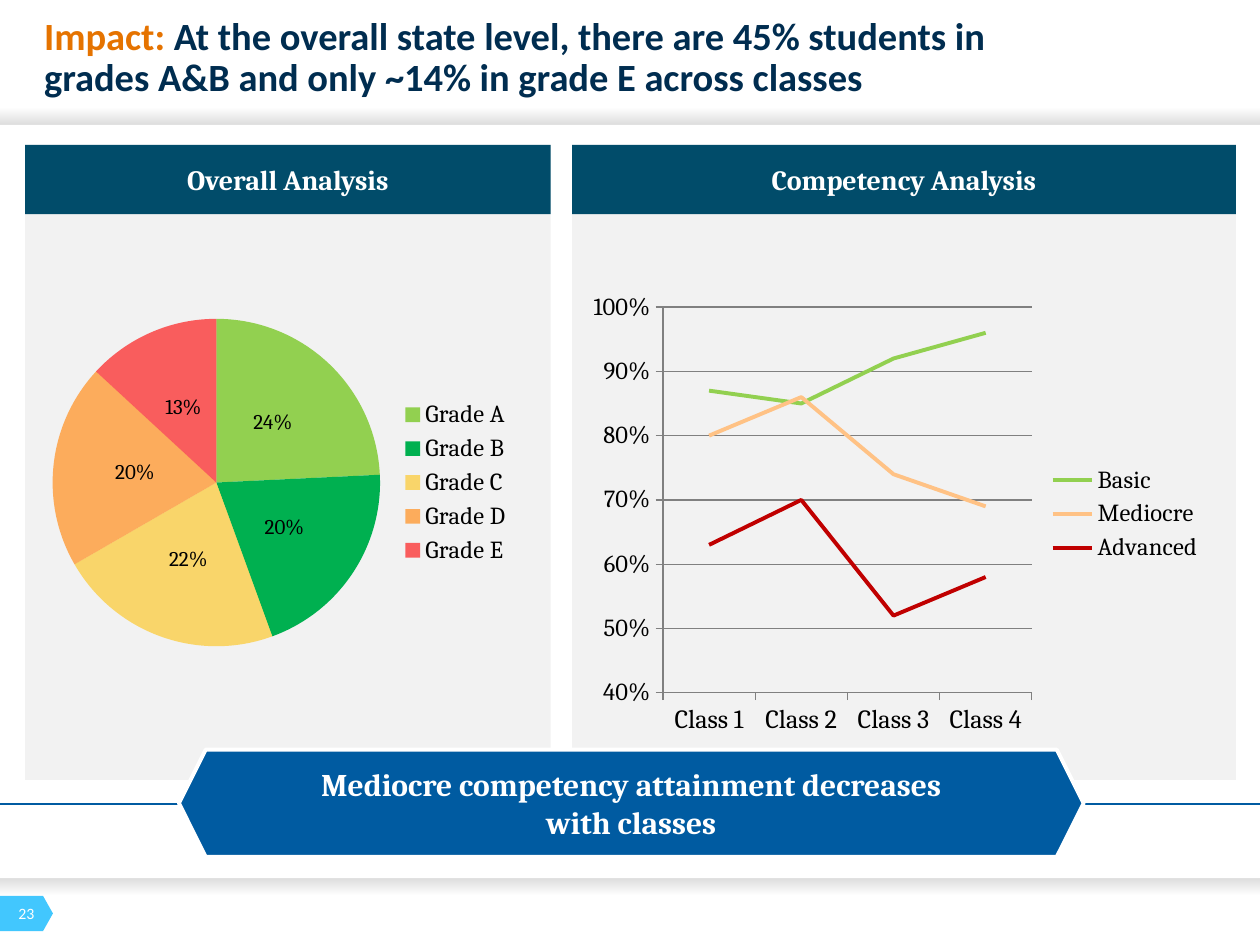
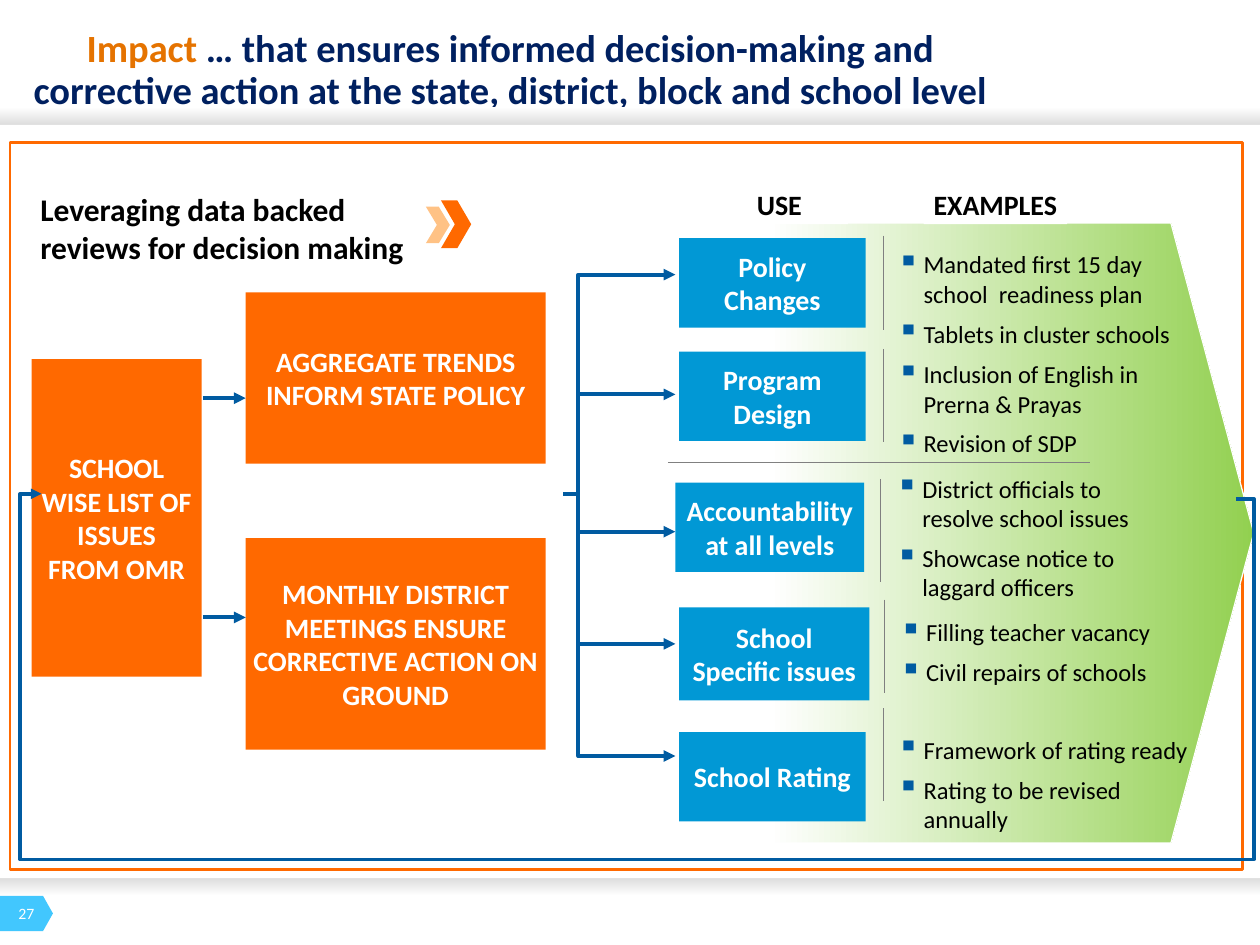
from typing import NamedTuple

from lxml import etree
from pptx import Presentation
from pptx.chart.data import CategoryChartData
from pptx.dml.color import RGBColor
from pptx.enum.chart import XL_CHART_TYPE, XL_LABEL_POSITION, XL_LEGEND_POSITION
from pptx.enum.shapes import MSO_CONNECTOR, MSO_SHAPE
from pptx.enum.text import MSO_ANCHOR, MSO_AUTO_SIZE, PP_ALIGN
from pptx.oxml.ns import qn
from pptx.util import Emu, Pt

PX = 9144  # 100 px to the inch
LEFT, CENTER = PP_ALIGN.LEFT, PP_ALIGN.CENTER
TOP, MIDDLE = MSO_ANCHOR.TOP, MSO_ANCHOR.MIDDLE
RECT, PENTAGON = MSO_SHAPE.RECTANGLE, MSO_SHAPE.PENTAGON
CHEVRON, HEXAGON = MSO_SHAPE.CHEVRON, MSO_SHAPE.HEXAGON
STRAIGHT, ELBOW = MSO_CONNECTOR.STRAIGHT, MSO_CONNECTOR.ELBOW
PIE, LINE = XL_CHART_TYPE.PIE, XL_CHART_TYPE.LINE

WHITE = RGBColor(0xFF, 0xFF, 0xFF)
BLACK = RGBColor(0x00, 0x00, 0x00)
SHADE = RGBColor(0xA6, 0xA6, 0xA6)
GRAY = RGBColor(0x80, 0x80, 0x80)
PANEL = RGBColor(0xF2, 0xF2, 0xF2)
SKY = RGBColor(0x42, 0xC7, 0xFE)
TEAL = RGBColor(0x01, 0x4C, 0x6A)
BLUE = RGBColor(0x00, 0x5B, 0xA1)
BRIGHT_BLUE = RGBColor(0x01, 0x98, 0xD5)
NAVY = RGBColor(0x00, 0x2D, 0x50)
DEEP_NAVY = RGBColor(0x00, 0x20, 0x60)
AMBER = RGBColor(0xE5, 0x73, 0x00)
ORANGE = RGBColor(0xFF, 0x69, 0x00)
PEACH = RGBColor(0xFF, 0xC2, 0x85)
LIME = RGBColor(0x92, 0xD0, 0x50)
GREEN = RGBColor(0x00, 0xB0, 0x50)
YELLOW = RGBColor(0xFF, 0xC0, 0x00)
TANGERINE = RGBColor(0xFF, 0x99, 0x33)
RED = RGBColor(0xFF, 0x00, 0x00)
DARK_RED = RGBColor(0xC0, 0x00, 0x00)


class Box(NamedTuple):
    left: int
    top: int
    width: int
    height: int

    def emu(self) -> list[Emu]:
        return [Emu(length * PX) for length in self]


class TextStyle(NamedTuple):
    size: int
    color: RGBColor
    font: str = "Calibri"
    bold: bool = True
    align: PP_ALIGN = CENTER
    anchor: MSO_ANCHOR = MIDDLE
    inset_x: int = 0
    inset_y: int = 0


class Grade(NamedTuple):
    name: str
    share: int
    color: RGBColor
    opacity: int


class Competency(NamedTuple):
    name: str
    attainment: list[float]
    color: RGBColor


class Use(NamedTuple):
    label: str
    box: Box
    rule: tuple[int, int, int]  # x, top, bottom
    examples_box: Box
    examples: list[str]


PAGE_NUMBER = TextStyle(9, WHITE, bold=False)
PANEL_HEADING = TextStyle(16, WHITE, "Cambria", inset_x=8, inset_y=8)
TAKEAWAY = TextStyle(18, WHITE, "Cambria", inset_x=10, inset_y=5)
STEP = TextStyle(16, WHITE, inset_x=6, inset_y=4)
COLUMN_HEADING = STEP._replace(color=BLACK)
USE_LABEL = STEP._replace(inset_x=8, inset_y=8)
LEAD = TextStyle(18, BLACK, align=LEFT, anchor=TOP)
EXAMPLE = TextStyle(14, BLACK, bold=False, align=LEFT, anchor=TOP)

GRADES = [
    Grade("Grade A", 24, LIME, 100),
    Grade("Grade B", 20, GREEN, 100),
    Grade("Grade C", 22, YELLOW, 56),
    Grade("Grade D", 20, TANGERINE, 78),
    Grade("Grade E", 13, RED, 61),
]
CLASSES = ["Class 1", "Class 2", "Class 3", "Class 4"]
COMPETENCIES = [
    Competency("Basic", [0.87, 0.85, 0.92, 0.96], LIME),
    Competency("Mediocre", [0.80, 0.86, 0.74, 0.69], PEACH),
    Competency("Advanced", [0.63, 0.70, 0.52, 0.58], DARK_RED),
]
STEPS = [
    ("SCHOOL WISE LIST OF ISSUES FROM OMR", Box(25, 285, 135, 252)),
    ("MONTHLY DISTRICT MEETINGS ENSURE CORRECTIVE ACTION ON GROUND", Box(195, 427, 238, 168)),
    ("AGGREGATE TRENDS INFORM STATE POLICY", Box(195, 232, 238, 136)),
]
USES = [
    Use("Policy Changes", Box(539, 189, 148, 71), (701, 187, 262), Box(712, 198, 224, 79),
        ["Mandated first 15 day school  readiness plan", "Tablets in cluster schools"]),
    Use("Program Design", Box(539, 279, 148, 71), (701, 277, 351), Box(712, 285, 208, 79),
        ["Inclusion of English in Prerna & Prayas", "Revision of SDP"]),
    Use("Accountability at all levels", Box(536, 383, 150, 71), (699, 380, 462),
        Box(711, 376, 208, 103),
        ["District officials to resolve school issues", "Showcase notice to laggard officers"]),
    Use("School Specific issues", Box(539, 482, 151, 74), (702, 476, 550), Box(714, 490, 206, 56),
        ["Filling teacher vacancy", "Civil repairs of schools"]),
    Use("School Rating", Box(539, 581, 148, 71), (701, 562, 636), Box(712, 583, 239, 79),
        ["Framework of rating ready", "Rating to be revised annually"]),
]


def set_frame(frame, style: TextStyle) -> None:
    frame.word_wrap = True
    frame.auto_size = MSO_AUTO_SIZE.NONE
    frame.vertical_anchor = style.anchor
    frame.margin_left = frame.margin_right = Emu(style.inset_x * PX)
    frame.margin_top = frame.margin_bottom = Emu(style.inset_y * PX)


def set_font(font, size: int, color: RGBColor, name: str, bold: bool = False) -> None:
    font.size, font.name, font.bold = Pt(size), name, bold
    font.color.rgb = color


def add_square_bullet(paragraph) -> None:
    properties = paragraph._p.get_or_add_pPr()
    properties.set("marL", str(21 * PX))
    properties.set("indent", str(-21 * PX))
    color = etree.SubElement(properties, qn("a:buClr"))
    etree.SubElement(color, qn("a:srgbClr"), val=str(BLUE))
    etree.SubElement(properties, qn("a:buSzPct"), val="125000")
    etree.SubElement(properties, qn("a:buChar"), char="▪")


def write(shape, lines: list[str], style: TextStyle, bulleted: bool = False) -> None:
    frame = shape.text_frame
    set_frame(frame, style)
    for index, line in enumerate(lines):
        paragraph = frame.add_paragraph() if index else frame.paragraphs[0]
        paragraph.text = line
        paragraph.alignment = style.align
        if bulleted:
            if index:
                paragraph.space_before = Pt(6)
            add_square_bullet(paragraph)
        set_font(paragraph.font, style.size, style.color, style.font, style.bold)


def add_text(slide, box: Box, lines: list[str], style: TextStyle, bulleted: bool = False) -> None:
    write(slide.shapes.add_textbox(*box.emu()), lines, style, bulleted)


def add_block(slide, box: Box, fill: RGBColor | None, kind=RECT, adjust: float | None = None,
              line: RGBColor | None = None, line_width: float = 1):
    block = slide.shapes.add_shape(kind, *box.emu())
    block.shadow.inherit = False
    if adjust is not None:
        block.adjustments[0] = adjust
    if fill is None:
        block.fill.background()
    else:
        block.fill.solid()
        block.fill.fore_color.rgb = fill
    if line is None:
        block.line.fill.background()
    else:
        block.line.color.rgb = line
        block.line.width = Pt(line_width)
    return block


def fade(block, end: RGBColor, angle: int, start_at: float = 0) -> None:
    """Fill with a gradient that runs from white to the end colour."""
    block.fill.gradient()
    block.fill.gradient_angle = angle
    first, last = block.fill.gradient_stops
    first.color.rgb, first.position = WHITE, start_at
    last.color.rgb, last.position = end, 1


def connect(slide, start: tuple[int, int], end: tuple[int, int], color: RGBColor = BLUE,
            width: float = 2.25, arrow: bool = True, bends: list[int] | None = None) -> None:
    """Join two points; bends are the x, y, x... at which the line turns."""
    kind = ELBOW if bends else STRAIGHT
    ends = [Emu(length * PX) for length in (*start, *end)]
    connector = slide.shapes.add_connector(kind, *ends)
    connector.line.color.rgb = color
    connector.line.width = Pt(width)
    properties = connector._element.spPr
    if bends:
        geometry = properties.find(qn("a:prstGeom"))
        geometry.set("prst", f"bentConnector{len(bends) + 2}")
        guides = geometry.find(qn("a:avLst"))
        for index, bend in enumerate(bends):
            axis = index % 2
            ratio = (bend - start[axis]) / (end[axis] - start[axis])
            etree.SubElement(guides, qn("a:gd"), name=f"adj{index + 1}" if len(bends) > 1 else "adj1",
                             fmla=f"val {round(ratio * 100000)}")
    if arrow:
        etree.SubElement(properties.find(qn("a:ln")), qn("a:tailEnd"), type="triangle")
    etree.SubElement(properties, qn("a:effectLst"))


def start_slide(deck, number: int, title_box: Box, align: PP_ALIGN, lead: str, rest: str,
                color: RGBColor):
    """Add a slide with the shared bands, page number and two-colour title."""
    slide = deck.slides.add_slide(deck.slide_layouts[5])
    for top, angle in ((85, 270), (676, 90)):
        fade(add_block(slide, Box(0, top, 1000, 35), WHITE), SHADE, angle)
    add_block(slide, Box(0, 99, 1000, 598), WHITE)
    add_block(slide, Box(0, 711, 42, 28), SKY, PENTAGON, 0.28)
    add_text(slide, Box(11, 717, 20, 15), [str(number)], PAGE_NUMBER)

    title = slide.shapes.title
    title.left, title.top, title.width, title.height = title_box.emu()
    set_frame(title.text_frame, TextStyle(22, color))
    heading = title.text_frame.paragraphs[0]
    heading.alignment, heading.line_spacing = align, 0.9
    heading.font.size, heading.font.name, heading.font.bold = Pt(22), "Calibri", True
    for words, shade in ((lead, AMBER), (rest, color)):
        run = heading.add_run()
        run.text = words
        run.font.color.rgb = shade
    return slide


def add_chart(slide, kind, box: Box, data: CategoryChartData):
    chart = slide.shapes.add_chart(kind, *box.emu(), data).chart
    chart.has_title = False
    set_font(chart.font, 14, BLACK, "Cambria")
    chart.has_legend = True
    chart.legend.position = XL_LEGEND_POSITION.RIGHT
    chart.legend.include_in_layout = False
    set_font(chart.legend.font, 14, BLACK, "Cambria")
    return chart


def add_grade_chart(slide) -> None:
    data = CategoryChartData()
    data.categories = [grade.name for grade in GRADES]
    data.add_series("Series 1", [grade.share for grade in GRADES])
    chart = add_chart(slide, PIE, Box(28, 186, 388, 394), data)
    plot = chart.plots[0]
    plot.vary_by_categories = True
    for index, grade in enumerate(GRADES):
        fill = plot.series[0].points[index].format.fill
        fill.solid()
        fill.fore_color.rgb = grade.color
    for grade, color in zip(GRADES, chart.element.xpath(".//c:dPt//a:srgbClr")):
        if grade.opacity < 100:
            etree.SubElement(color, qn("a:alpha"), val=str(grade.opacity * 1000))
    plot.has_data_labels = True
    labels = plot.data_labels
    labels.show_percentage, labels.show_value = True, False
    labels.number_format, labels.number_format_is_linked = "0%", False
    labels.position = XL_LABEL_POSITION.CENTER
    set_font(labels.font, 12, BLACK, "Cambria")


def add_competency_chart(slide) -> None:
    data = CategoryChartData(number_format="0%")
    data.categories = CLASSES
    for competency in COMPETENCIES:
        data.add_series(competency.name, competency.attainment)
    chart = add_chart(slide, LINE, Box(461, 225, 504, 366), data)
    chart.plots[0].vary_by_categories = False
    for series, competency in zip(chart.plots[0].series, COMPETENCIES):
        series.smooth = False
        series.format.line.color.rgb = competency.color
        series.format.line.width = Pt(2.25)
    percent = chart.value_axis
    percent.minimum_scale, percent.maximum_scale, percent.major_unit = 0.4, 1, 0.1
    percent.major_gridlines.format.line.color.rgb = GRAY
    percent.tick_labels.number_format = "0%"
    percent.tick_labels.number_format_is_linked = False
    for axis, size in ((percent, 14), (chart.category_axis, 15)):
        axis.format.line.color.rgb = GRAY
        set_font(axis.tick_labels.font, size, BLACK, "Cambria")


def build_analysis(deck) -> None:
    slide = start_slide(
        deck, 23, Box(35, 13, 751, 67), LEFT, "Impact: ",
        "At the overall state level, there are 45% students in grades A&B "
        "and only ~14% in grade E across classes", NAVY)
    for heading, left, width in (("Overall Analysis", 20, 417), ("Competency Analysis", 454, 527)):
        add_block(slide, Box(left, 115, width, 504), PANEL)
        write(add_block(slide, Box(left, 115, width, 55), TEAL), [heading], PANEL_HEADING)
    add_grade_chart(slide)
    add_competency_chart(slide)
    connect(slide, (0, 638), (1000, 638), width=1.5, arrow=False)
    takeaway = add_block(slide, Box(142, 595, 718, 85), BLUE, HEXAGON, line=WHITE, line_width=2.25)
    write(takeaway, ["Mediocre competency attainment decreases", "with classes"], TAKEAWAY)


def build_decisions(deck) -> None:
    slide = start_slide(
        deck, 27, Box(13, 23, 784, 67), CENTER, "Impact",
        " … that ensures informed decision-making and corrective action "
        "at the state, district, block and school level", DEEP_NAVY)
    add_block(slide, Box(8, 113, 978, 577), None, line=ORANGE, line_width=1.5)
    backdrop = add_block(slide, Box(526, 177, 469, 492), WHITE, PENTAGON, 0.14, WHITE, 0.75)
    fade(backdrop, LIME, 0, 0.18)
    add_text(slide, Box(32, 151, 317, 61),
             ["Leveraging data backed", "reviews for decision making"], LEAD)
    add_block(slide, Box(350, 159, 24, 38), ORANGE, CHEVRON, 0.46)
    add_block(slide, Box(338, 164, 19, 29), PEACH, CHEVRON, 0.46)

    for heading, box in (("USE", Box(564, 147, 109, 31)), ("EXAMPLES", Box(733, 147, 114, 31))):
        write(add_block(slide, box, WHITE), [heading], COLUMN_HEADING)
    for words, box in STEPS:
        write(add_block(slide, box, ORANGE), [words], STEP)
    for y in (316, 490):
        connect(slide, (161, y), (195, y))
    for y in (218, 600):
        connect(slide, (447, 392), (536, y), bends=[459])
    for y in (313, 422, 511):
        connect(slide, (460, y), (536, y))

    for use in USES:
        write(add_block(slide, use.box, BRIGHT_BLUE), [use.label], USE_LABEL)
        x, top, bottom = use.rule
        connect(slide, (x, top), (x, bottom), GRAY, 0.75, arrow=False)
        add_text(slide, use.examples_box, use.examples, EXAMPLE, bulleted=True)
    connect(slide, (530, 367), (865, 367), GRAY, 0.75, arrow=False)
    connect(slide, (981, 396), (33, 392), width=2, bends=[995, 681, 16])


def main() -> None:
    deck = Presentation()
    deck.slide_width, deck.slide_height = Emu(1000 * PX), Emu(750 * PX)
    build_analysis(deck)
    build_decisions(deck)
    deck.save("out.pptx")


if __name__ == "__main__":
    main()
